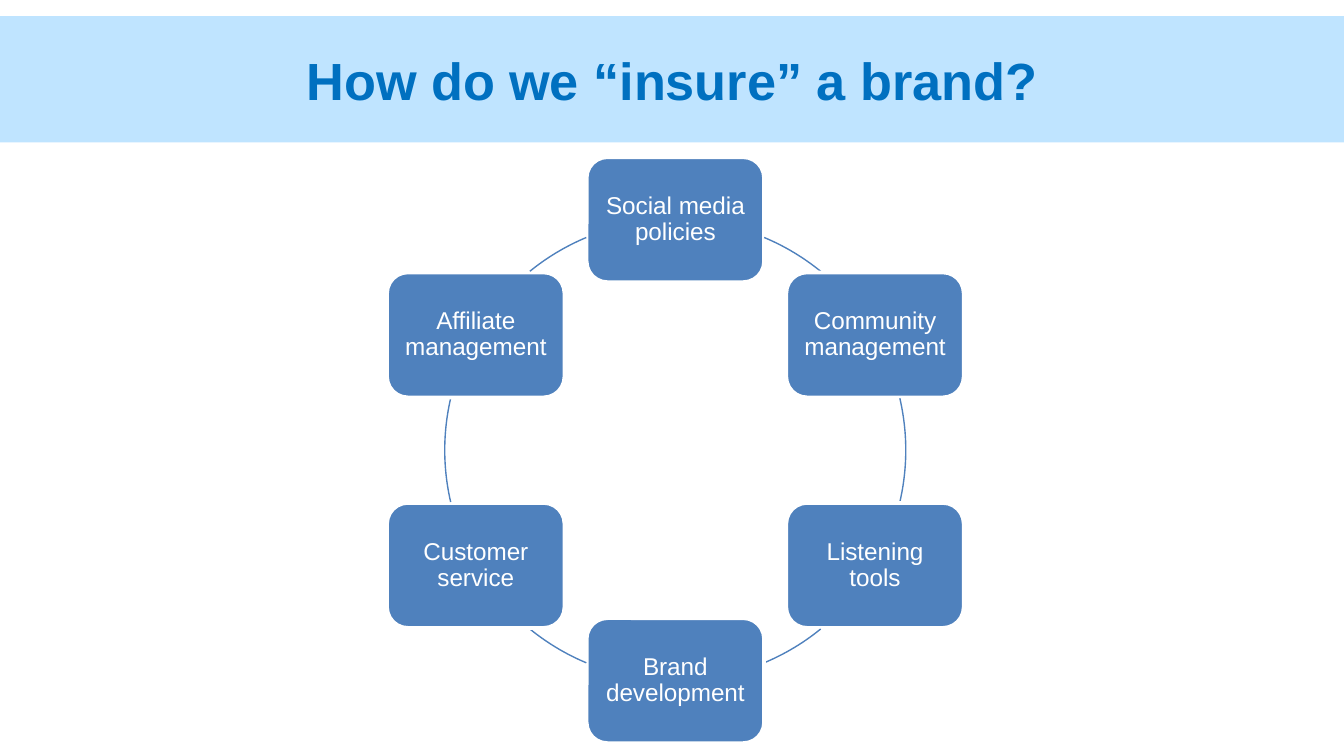
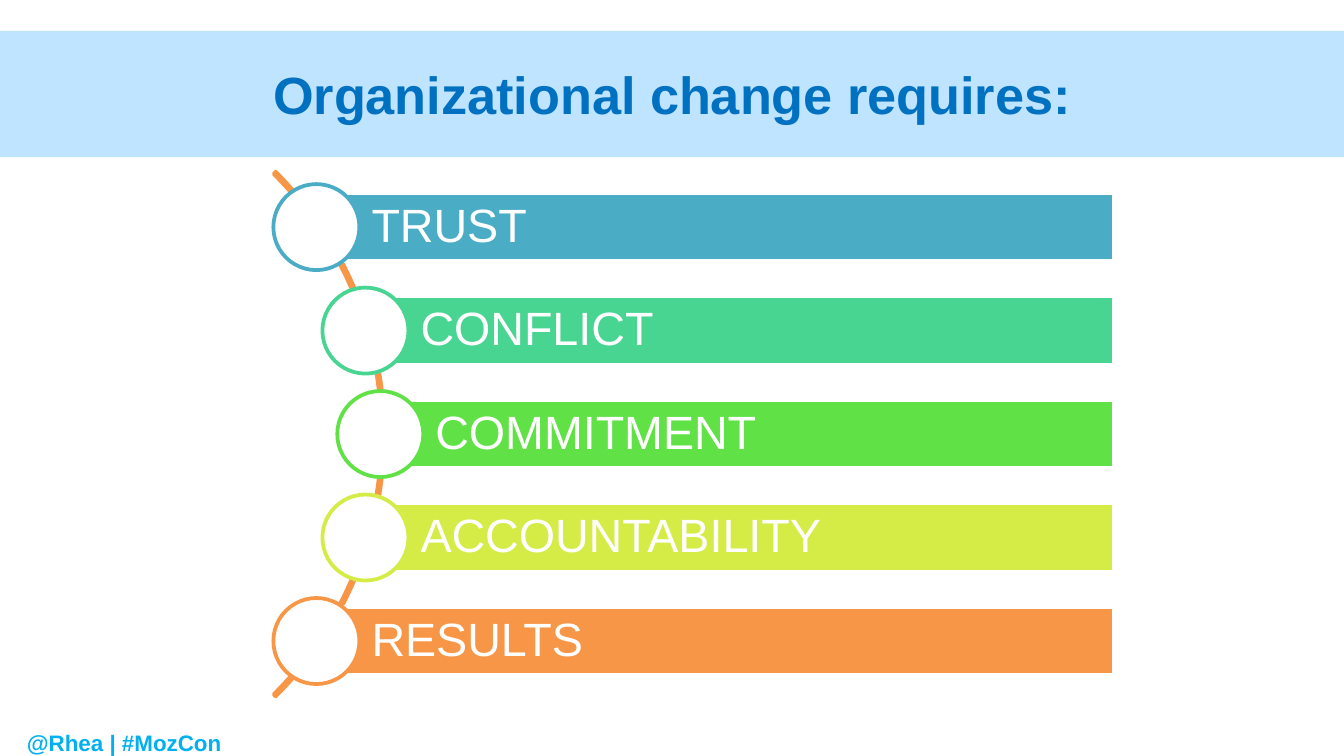
import math

from pptx import Presentation
from pptx.dml.color import RGBColor
from pptx.enum import shapes, text
from pptx.util import Inches, Pt

FONT = "Arial"
WHITE = RGBColor(0xFF, 0xFF, 0xFF)
BAND_BLUE = RGBColor(0xBF, 0xE4, 0xFF)
TITLE_BLUE = RGBColor(0x00, 0x70, 0xC0)
FOOTER_BLUE = RGBColor(0x00, 0xB0, 0xF0)
NODE_BLUE = RGBColor(0x4F, 0x81, 0xBD)
TEAL = RGBColor(0x4B, 0xAC, 0xC6)
MINT = RGBColor(0x48, 0xD4, 0x91)
GREEN = RGBColor(0x60, 0xE1, 0x46)
LIME = RGBColor(0xD5, 0xEC, 0x46)
ORANGE = RGBColor(0xF7, 0x96, 0x46)

SLIDE_WIDTH = 10
SLIDE_HEIGHT = SLIDE_WIDTH * 9 / 16
DEGREE = 0.6

PRACTICES = [
    ("Social media policies", (292.7, 309.1)),
    ("Community management", (347, 13)),
    ("Listening tools", (50.9, 67.3)),
    ("Brand development", (112.7, 129.1)),
    ("Customer service", (167, 193)),
    ("Affiliate management", (230.9, 247.3)),
]
REQUIREMENTS = [
    ("TRUST", TEAL),
    ("CONFLICT", MINT),
    ("COMMITMENT", GREEN),
    ("ACCOUNTABILITY", LIME),
    ("RESULTS", ORANGE),
]


def add_shape(page, kind, box, fill=None, line=None, weight=2):
    shape = page.shapes.add_shape(kind, *[Inches(value) for value in box])
    shape.shadow.inherit = False
    if fill is None:
        shape.fill.background()
    else:
        shape.fill.solid()
        shape.fill.fore_color.rgb = fill
    if line is None:
        shape.line.fill.background()
    else:
        shape.line.color.rgb = line
        shape.line.width = Pt(weight)
    return shape


def write(shape, words, size, color, bold=False, align=text.PP_ALIGN.CENTER,
          anchor=text.MSO_ANCHOR.MIDDLE, insets=(0.1, 0.05, 0.1, 0.05), spacing=None):
    frame = shape.text_frame
    frame.word_wrap = True
    frame.vertical_anchor = anchor
    (frame.margin_left, frame.margin_top,
     frame.margin_right, frame.margin_bottom) = [Inches(inset) for inset in insets]
    para = frame.paragraphs[0]
    para.alignment = align
    if spacing is not None:
        para.line_spacing = spacing
    span = para.add_run()
    span.text = words
    span.font.name = FONT
    span.font.size = Pt(size)
    span.font.bold = bold
    span.font.color.rgb = color


def add_title_band(page, words, top):
    band = add_shape(page, shapes.MSO_SHAPE.RECTANGLE,
                     (0, top, SLIDE_WIDTH, 0.94), BAND_BLUE)
    write(band, words, 28, TITLE_BLUE, bold=True)


def add_footer(page, words):
    footer = add_shape(page, shapes.MSO_SHAPE.RECTANGLE,
                       (0, 5.23, SLIDE_WIDTH, 0.4), WHITE)
    write(footer, words, 12, FOOTER_BLUE, bold=True, align=text.PP_ALIGN.LEFT,
          anchor=text.MSO_ANCHOR.TOP, insets=(0.2, 0.05, 0.1, 0.05), spacing=Pt(25))


def add_cycle(page, box, practices):
    left, top, size = box
    radius = size / 2
    node_width, node_height = 1.32, 0.93
    for index, (label, span) in enumerate(practices):
        angle = math.radians(index * 360 / len(practices) - 90)
        x = left + radius + radius * math.cos(angle)
        y = top + radius + radius * math.sin(angle)
        node = add_shape(page, shapes.MSO_SHAPE.ROUNDED_RECTANGLE,
                         (x - node_width / 2, y - node_height / 2, node_width, node_height),
                         NODE_BLUE, WHITE)
        write(node, label, 13, WHITE, insets=(0.05,) * 4, spacing=0.9)
        arc = add_shape(page, shapes.MSO_SHAPE.ARC, (left, top, size, size),
                        line=NODE_BLUE, weight=0.75)
        for end, degrees in enumerate(span):
            arc.adjustments[end] = degrees * DEGREE


def add_curved_list(page, box, items):
    left, top, size = box
    center_x, center_y = left + size / 2, top + size / 2
    curve = add_shape(page, shapes.MSO_SHAPE.BLOCK_ARC, (left, top, size, size), line=ORANGE)
    curve.adjustments[0] = 315 * DEGREE
    curve.adjustments[1] = 45 * DEGREE
    curve.adjustments[2] = 0.004

    bar_right, bar_height, pitch, dot = 8.29, 0.51, 0.77, 0.64
    radius = size / 2 - 0.03
    for index, (label, color) in enumerate(items):
        offset = (index - (len(items) - 1) / 2) * pitch
        x = center_x + math.sqrt(radius ** 2 - offset ** 2)
        y = center_y + offset
        bar = add_shape(page, shapes.MSO_SHAPE.RECTANGLE,
                        (x, y - bar_height / 2, bar_right - x, bar_height), color, WHITE)
        write(bar, label, 25, WHITE, align=text.PP_ALIGN.LEFT,
              insets=(0.41, 0.07, 0.07, 0.07), spacing=0.9)
        add_shape(page, shapes.MSO_SHAPE.OVAL,
                  (x - dot / 2, y - dot / 2, dot, dot), WHITE, color)


def build_insurance_page(page):
    add_cycle(page, (3.31, 1.635, 3.43), PRACTICES)
    add_title_band(page, "How do we “insure” a brand?", 0.12)


def build_change_page(page):
    add_title_band(page, "Organizational change requires:", 0.23)
    add_curved_list(page, (-2.66, 0.47, 5.52), REQUIREMENTS)
    add_footer(page, "@Rhea | #MozCon")


def main():
    deck = Presentation()
    deck.slide_width = Inches(SLIDE_WIDTH)
    deck.slide_height = Inches(SLIDE_HEIGHT)
    for build in (build_insurance_page, build_change_page):
        build(deck.slides.add_slide(deck.slide_layouts[6]))
    deck.save("out.pptx")


if __name__ == "__main__":
    main()
